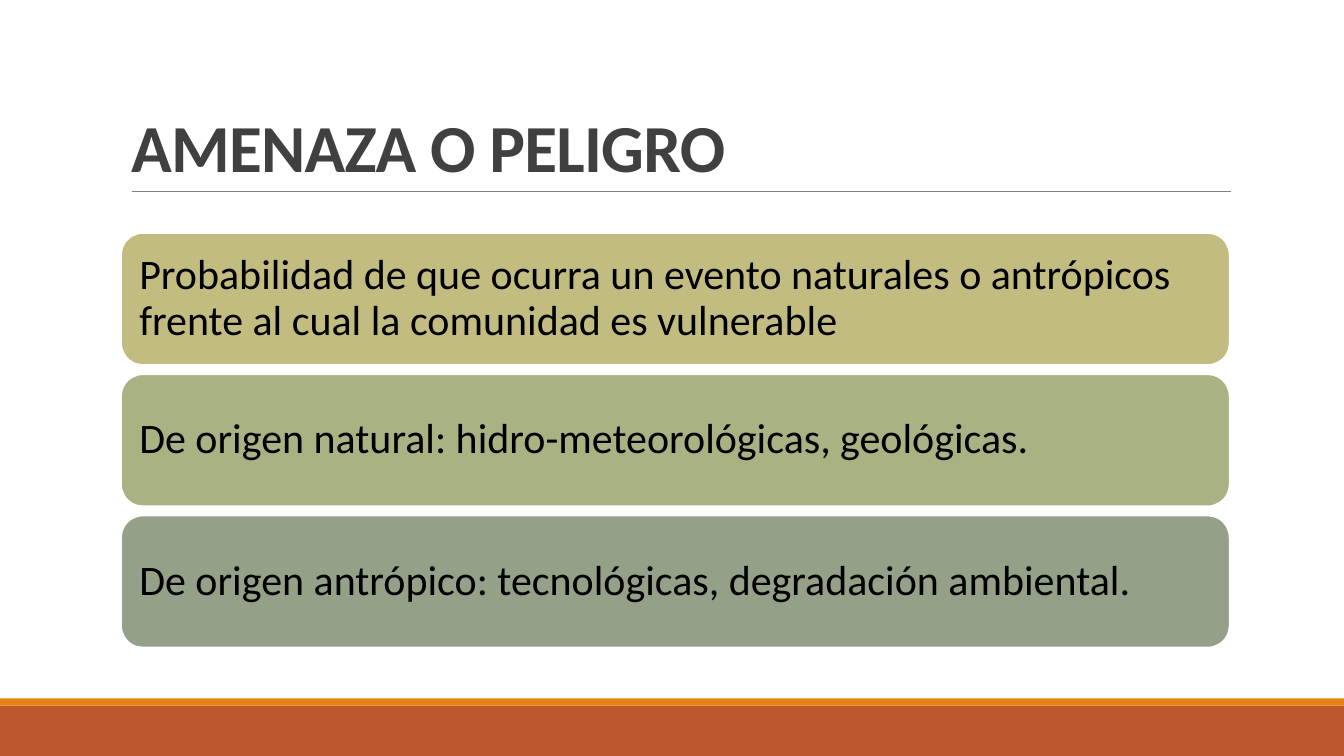
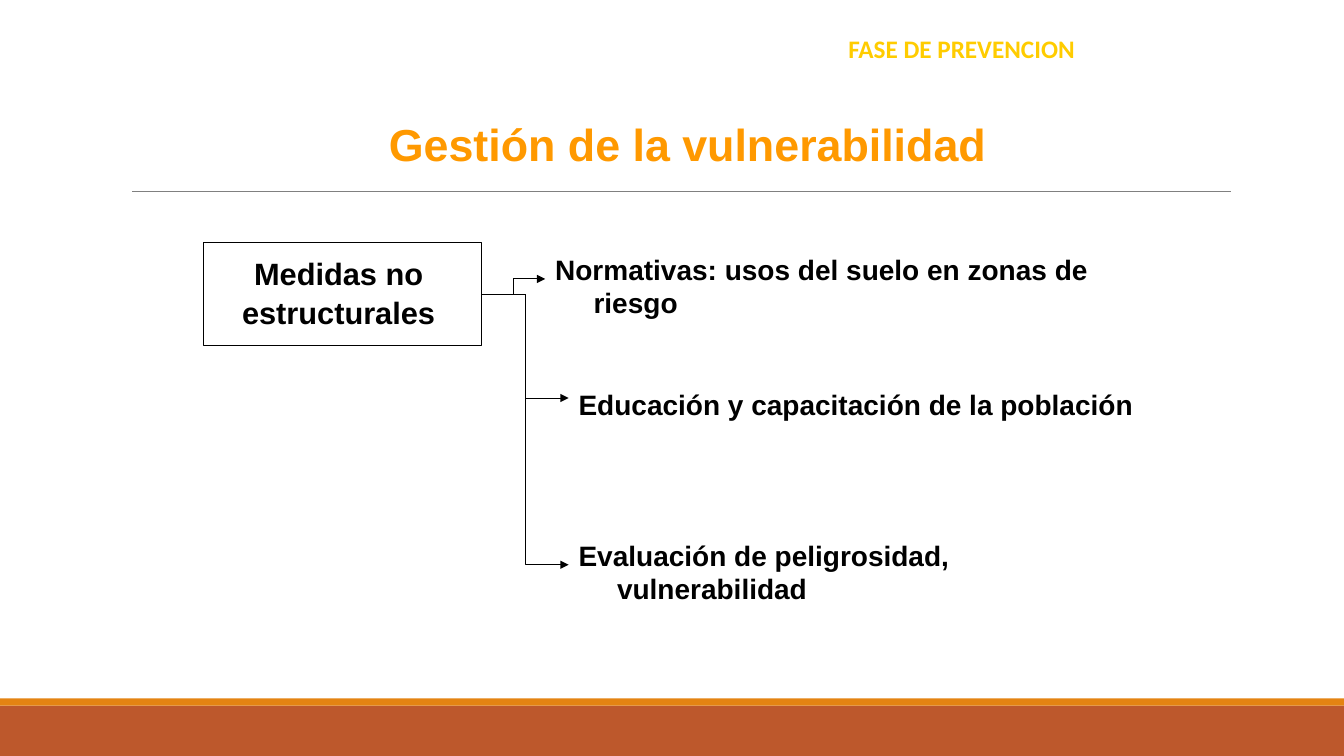
from dataclasses import dataclass

from lxml.etree import SubElement
from pptx import Presentation
from pptx.dml.color import RGBColor
from pptx.enum.shapes import MSO_CONNECTOR, MSO_SHAPE
from pptx.enum.text import MSO_ANCHOR, MSO_AUTO_SIZE, PP_ALIGN
from pptx.oxml.ns import qn
from pptx.util import Cm, Pt

TITLE_ONLY = 5
LEFT_SIDE, RIGHT_SIDE = 1, 3


@dataclass(frozen=True)
class Theme:
    base: RGBColor = RGBColor.from_string("BD582C")
    accent: RGBColor = RGBColor.from_string("E48312")
    rule: RGBColor = RGBColor.from_string("808080")
    heading: RGBColor = RGBColor.from_string("404040")
    topic: RGBColor = RGBColor.from_string("FF9900")
    phase: RGBColor = RGBColor.from_string("FFCC00")
    ink: RGBColor = RGBColor.from_string("000000")
    paper: RGBColor = RGBColor.from_string("FFFFFF")
    cards: tuple = tuple(map(RGBColor.from_string, ("C2BC80", "A8B283", "94A088")))
    sans: str = "Calibri"
    plain: str = "Arial"
    heading_size: Pt = Pt(48)
    topic_size: Pt = Pt(32)
    card_size: Pt = Pt(30)
    cause_size: Pt = Pt(22)
    measure_size: Pt = Pt(20)
    phase_size: Pt = Pt(18)


def apply(target, values):
    """Set each attribute named in values on target."""
    for name, value in values.items():
        setattr(target, name, value)


def box(left, top, width, height):
    return [Cm(length) for length in (left, top, width, height)]


def font(name, size, color, bold=True):
    return {"name": name, "size": size, "bold": bold, "color": color}


def write(frame, lines, style, layout=None, paragraph_format=None):
    """Fill a text frame with one formatted paragraph per line."""
    apply(frame, {"word_wrap": True, "auto_size": MSO_AUTO_SIZE.NONE,
                  **(layout or {})})
    frame.text = "\n".join(lines)
    for paragraph in frame.paragraphs:
        apply(paragraph, paragraph_format or {})
        for run in paragraph.runs:
            apply(run.font, {k: v for k, v in style.items() if k != "color"})
            run.font.color.rgb = style["color"]


class Deck:
    def __init__(self, theme):
        self.theme = theme
        self.presentation = Presentation()
        apply(self.presentation, {"slide_width": Cm(33.87),
                                  "slide_height": Cm(19.05)})
        self.slide = None

    def new_slide(self):
        layout = self.presentation.slide_layouts[TITLE_ONLY]
        self.slide = self.presentation.slides.add_slide(layout)
        self.panel(box(0, 17.78, 33.87, 1.27), fill=self.theme.base)
        self.panel(box(0, 17.6, 33.87, 0.18), fill=self.theme.accent)
        rule = self.connector(MSO_CONNECTOR.STRAIGHT, self.theme.rule, 0.5)
        apply(rule, {"begin_x": Cm(3.33), "begin_y": Cm(4.83),
                     "end_x": Cm(31.01), "end_y": Cm(4.83)})

    def title(self, text, place, style, anchor, align, spacing=1.0, tracking=0):
        title = self.slide.shapes.title
        apply(title, dict(zip(("left", "top", "width", "height"), place)))
        write(title.text_frame, [text], style, {"vertical_anchor": anchor},
              {"alignment": align, "line_spacing": spacing})
        for run in title.text_frame.paragraphs[0].runs:
            run.font._element.set("spc", str(tracking))

    def panel(self, place, kind=MSO_SHAPE.RECTANGLE, fill=None, outline=None,
              weight=0.75):
        panel = self.slide.shapes.add_shape(kind, *place)
        panel.shadow.inherit = False
        for part, color in ((panel.fill, fill), (panel.line.fill, outline)):
            if color is None:
                part.background()
            else:
                part.solid()
                part.fore_color.rgb = color
        if outline is not None:
            panel.line.width = Pt(weight)
        return panel

    def card(self, text, top, height, fill):
        card = self.panel(box(3.05, top, 27.94, height),
                          MSO_SHAPE.ROUNDED_RECTANGLE, fill, self.theme.paper, 1.25)
        margins = dict.fromkeys(("margin_left", "margin_right", "margin_top",
                                 "margin_bottom"), Cm(0.3))
        write(card.text_frame, [text],
              font(self.theme.sans, self.theme.card_size, self.theme.ink, False),
              {"vertical_anchor": MSO_ANCHOR.MIDDLE, **margins},
              {"alignment": PP_ALIGN.LEFT, "line_spacing": 0.9})

    def label(self, text, place, style, layout=None, hanging=0):
        label = self.slide.shapes.add_textbox(*place)
        write(label.text_frame, [text], style, layout)
        if hanging:
            properties = label.text_frame.paragraphs[0]._p.get_or_add_pPr()
            properties.set("marL", str(Cm(hanging)))
            properties.set("indent", str(-Cm(hanging)))
        return label

    def connector(self, kind, color, weight):
        connector = self.slide.shapes.add_connector(kind, 0, 0, 0, 0)
        connector.line.color.rgb = color
        connector.line.width = Pt(weight)
        SubElement(connector.element.spPr, qn("a:effectLst"))
        return connector

    def arrow(self, source, target):
        """Lead an elbow arrow from source's right side to target's left side."""
        arrow = self.connector(MSO_CONNECTOR.ELBOW, self.theme.ink, 0.75)
        arrow.begin_connect(source, RIGHT_SIDE)
        arrow.end_connect(target, LEFT_SIDE)
        outline = arrow.element.spPr.find(qn("a:ln"))
        SubElement(outline, qn("a:tailEnd"), type="triangle")


def threat_slide(deck):
    theme = deck.theme
    deck.new_slide()
    deck.title("AMENAZA O PELIGRO", box(3.05, 0.79, 27.94, 4.04),
               font(theme.sans, theme.heading_size, theme.heading),
               MSO_ANCHOR.BOTTOM, PP_ALIGN.LEFT, spacing=0.85, tracking=-50)
    statements = (
        "Probabilidad de que ocurra un evento naturales o antrópicos "
        "frente al cual la comunidad es vulnerable",
        "De origen natural: hidro-meteorológicas, geológicas.",
        "De origen antrópico: tecnológicas, degradación ambiental.",
    )
    height, gap = 3.33, 0.23
    for row, (statement, fill) in enumerate(zip(statements, theme.cards)):
        deck.card(statement, 5.87 + row * (height + gap), height, fill)


def vulnerability_slide(deck):
    theme = deck.theme
    deck.new_slide()
    deck.title("Gestión de la vulnerabilidad", box(6.73, 2.92, 21.21, 1.4),
               font(theme.plain, theme.topic_size, theme.topic),
               MSO_ANCHOR.MIDDLE, PP_ALIGN.CENTER)
    cause = deck.panel(box(5.13, 6.12, 7.01, 2.59), outline=theme.ink)
    write(cause.text_frame, ["Medidas no", "estructurales"],
          font(theme.plain, theme.cause_size, theme.ink),
          {"vertical_anchor": MSO_ANCHOR.TOP, "margin_top": Cm(0.4),
           "margin_right": Cm(0.45)},
          {"alignment": PP_ALIGN.CENTER, "line_spacing": 0.9})
    cause.text_frame.paragraphs[1].space_before = Pt(4.4)

    measures = (
        ("Normativas: usos del suelo en zonas de riesgo", 13.74, 7.03, 15.11, 1.8),
        ("Educación y capacitación de la población", 14.33, 10.03, 14.81, 1),
        ("Evaluación de peligrosidad, vulnerabilidad", 14.33, 14.23, 13.21, 1.8),
    )
    for text, left, middle, width, height in measures:
        measure = deck.label(text, box(left, middle - height / 2, width, height),
                             font(theme.plain, theme.measure_size, theme.ink),
                             {"margin_top": Cm(0.23)}, hanging=0.97)
        deck.arrow(cause, measure)
    deck.label("FASE DE PREVENCION", box(21.13, 0.71, 6.27, 1.02),
               font(theme.sans, theme.phase_size, theme.phase),
               {"word_wrap": False})


def main():
    deck = Deck(Theme())
    threat_slide(deck)
    vulnerability_slide(deck)
    deck.presentation.save("out.pptx")


if __name__ == "__main__":
    main()
